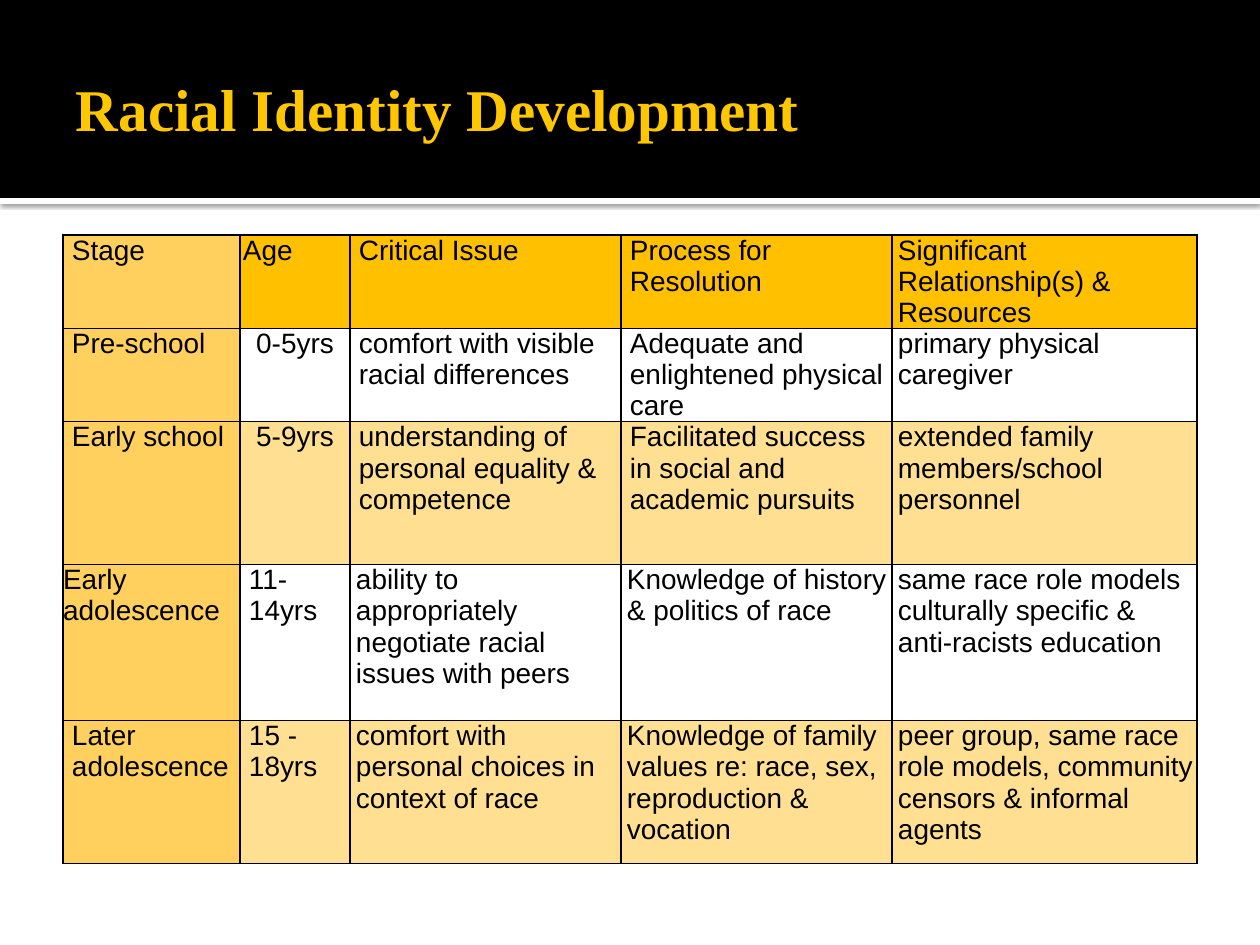
import dataclasses

import pptx
import pptx.dml.color
import pptx.enum.shapes
import pptx.enum.text
import pptx.oxml
import pptx.oxml.ns
import pptx.util

EMU_PER_PX = 914400 / 126
CENTER = None  # marks a centred cell in a list of indents


def px(length):
    return pptx.util.Emu(round(length * EMU_PER_PX))


def rgb(color):
    return pptx.dml.color.RGBColor.from_string(color)


def xml(text):
    """Parse one element written with the a: prefix."""
    tag, rest = text.split(" ", 1)
    return pptx.oxml.parse_xml(f"{tag} {pptx.oxml.ns.nsdecls('a')} {rest}")


@dataclasses.dataclass(frozen=True)
class Theme:
    black: str = "000000"
    white: str = "FFFFFF"
    title: str = "FFC700"
    header: str = "FFC000"
    stage: str = "FFD05D"
    stripe: str = "FFE093"
    title_font: str = "Times New Roman"
    body_font: str = "Arial"
    title_size: float = 33.8
    body_size: int = 16
    border: int = 1


class SlideBuilder:
    def __init__(self, page, theme):
        self.page = page
        self.theme = theme

    def format_text(self, para, font, size, color, bold=False):
        for span in para.runs:
            span.font.name = font
            span.font.size = pptx.util.Pt(size)
            span.font.bold = bold
            span.font.color.rgb = rgb(color)

    def band(self, top, height, color, shadow=False):
        band = self.page.shapes.add_shape(
            pptx.enum.shapes.MSO_SHAPE.RECTANGLE, 0, px(top), px(1260), px(height))
        band.shadow.inherit = False
        band.fill.solid()
        band.fill.fore_color.rgb = rgb(color)
        band.line.fill.background()
        if shadow:
            effects = band._element.spPr.find(pptx.oxml.ns.qn("a:effectLst"))
            effects.append(xml(
                '<a:outerShdw blurRad="31750" dist="10160" dir="5400000" rotWithShape="0">'
                f'<a:srgbClr val="{self.theme.black}"><a:alpha val="60000"/></a:srgbClr>'
                '</a:outerShdw>'))

    def title(self, text, left, top, width, height):
        title = self.page.shapes.title
        title.left, title.top, title.width, title.height = map(px, (left, top, width, height))
        self.page.shapes._spTree.append(title._element)  # in front of the bands
        frame = title.text_frame
        frame.text = text
        frame.word_wrap = True
        frame.auto_size = pptx.enum.text.MSO_AUTO_SIZE.NONE
        frame.vertical_anchor = pptx.enum.text.MSO_ANCHOR.MIDDLE
        frame.margin_left = px(13)
        frame.margin_right = frame.margin_top = frame.margin_bottom = px(6)
        para = frame.paragraphs[0]
        para.alignment = pptx.enum.text.PP_ALIGN.LEFT
        self.format_text(para, self.theme.title_font, self.theme.title_size,
                         self.theme.title, bold=True)

    def table(self, left, top, widths, heights, rows, indents):
        table = self.page.shapes.add_table(
            len(heights), len(widths), px(left), px(top),
            px(sum(widths)), px(sum(heights))).table
        table.first_row = table.horz_banding = False
        for column, width in zip(table.columns, widths):
            column.width = px(width)
        for row, height in zip(table.rows, heights):
            row.height = px(height)
        for r, texts in enumerate(rows):
            for c, text in enumerate(texts):
                self.cell(table.cell(r, c), text, indents[r][c], self.cell_color(r, c))

    def cell_color(self, row, column):
        if column == 0:
            return self.theme.stage
        if row == 0:
            return self.theme.header
        return self.theme.stripe if row % 2 == 0 else None

    def cell(self, cell, text, indent, color):
        cell.text = text
        cell.margin_left = cell.margin_right = cell.margin_top = cell.margin_bottom = 0
        for para in cell.text_frame.paragraphs:
            if indent is CENTER:
                para.alignment = pptx.enum.text.PP_ALIGN.CENTER
            else:
                para._p.get_or_add_pPr().set("marL", str(px(indent)))
            self.format_text(para, self.theme.body_font, self.theme.body_size,
                             self.theme.black)
        properties = cell._tc.get_or_add_tcPr()
        for side in "LRTB":
            properties.append(xml(
                f'<a:ln{side} w="{pptx.util.Pt(self.theme.border)}"><a:solidFill>'
                f'<a:srgbClr val="{self.theme.black}"/></a:solidFill></a:ln{side}>'))
        if color is None:
            cell.fill.background()
        else:
            cell.fill.solid()
            cell.fill.fore_color.rgb = rgb(color)


STAGES = [
    ["Stage", "Age", "Critical Issue", "Process for\nResolution",
     "Significant\nRelationship(s) & Resources"],
    ["Pre-school", "0-5yrs", "comfort with visible\nracial differences",
     "Adequate and\nenlightened physical\ncare", "primary physical\ncaregiver"],
    ["Early school", "5-9yrs", "understanding of\npersonal equality &\ncompetence",
     "Facilitated success\nin social and\nacademic pursuits",
     "extended family\nmembers/school personnel"],
    ["Early adolescence", "11- 14yrs",
     "ability to appropriately\nnegotiate racial issues with peers",
     "Knowledge of history & politics of race",
     "same race role models culturally specific &\nanti-racists education"],
    ["Later adolescence", "15 - 18yrs",
     "comfort with personal choices in context of race",
     "Knowledge of family values re: race, sex, reproduction & vocation",
     "peer group, same race role models, community censors & informal agents"],
]
INDENTS = [
    [9, 3, 9, 9, 6],
    [9, CENTER, 9, 9, 6],
    [9, CENTER, 9, 9, 6],
    [0, 9, 6, 6, 6],
    [9, 9, 6, 6, 6],
]


def main():
    deck = pptx.Presentation()
    deck.slide_width, deck.slide_height = px(1260), px(945)
    theme = Theme()
    builder = SlideBuilder(deck.slides.add_slide(deck.slide_layouts[5]), theme)
    builder.band(198, 6, theme.white, shadow=True)
    builder.band(0, 198, theme.black)
    builder.title("Racial Identity Development", 63, 21, 1134, 173)
    builder.table(63, 235, [177, 110, 271, 271, 305], [93, 93, 143, 156, 143],
                  STAGES, INDENTS)
    deck.save("out.pptx")


if __name__ == "__main__":
    main()
